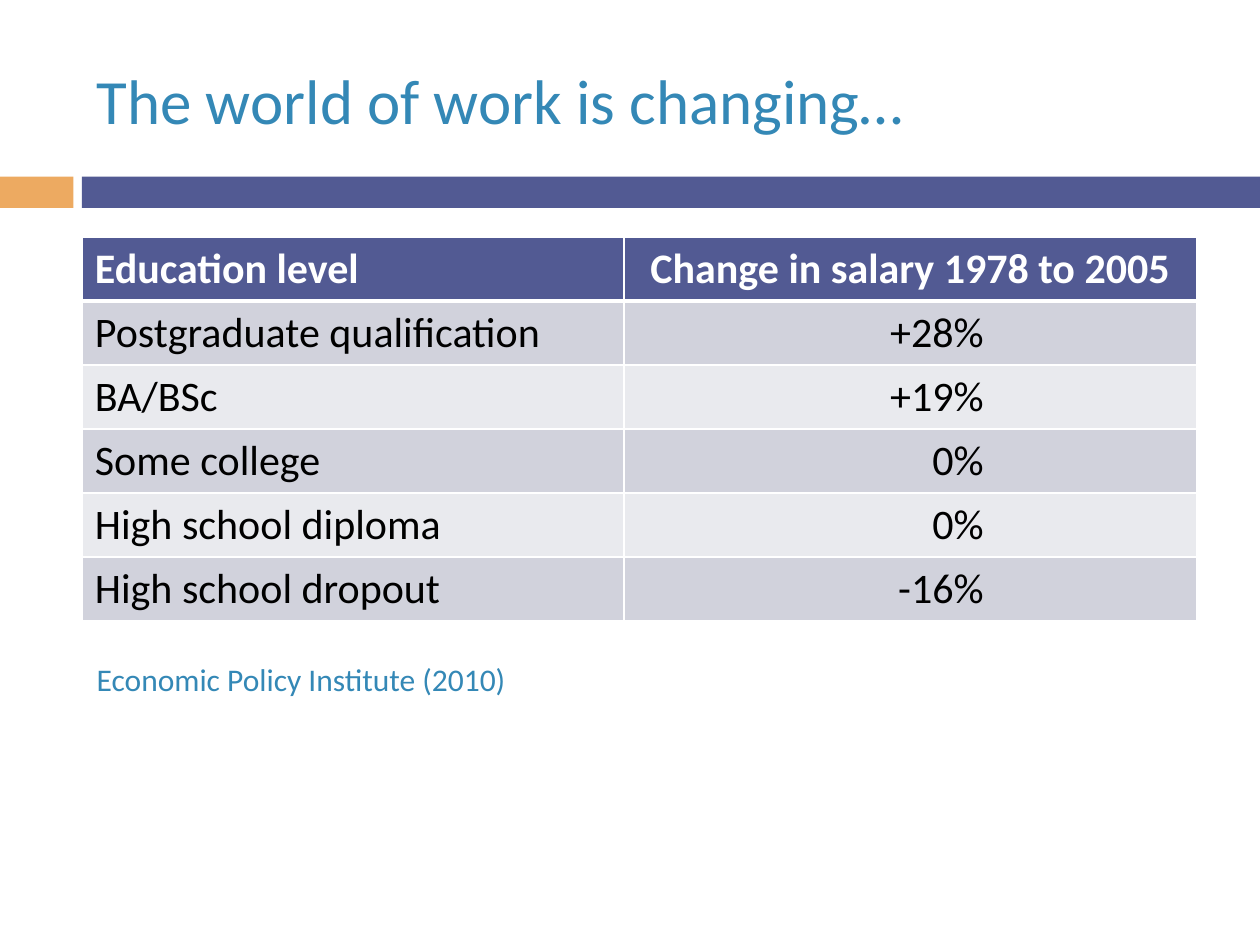
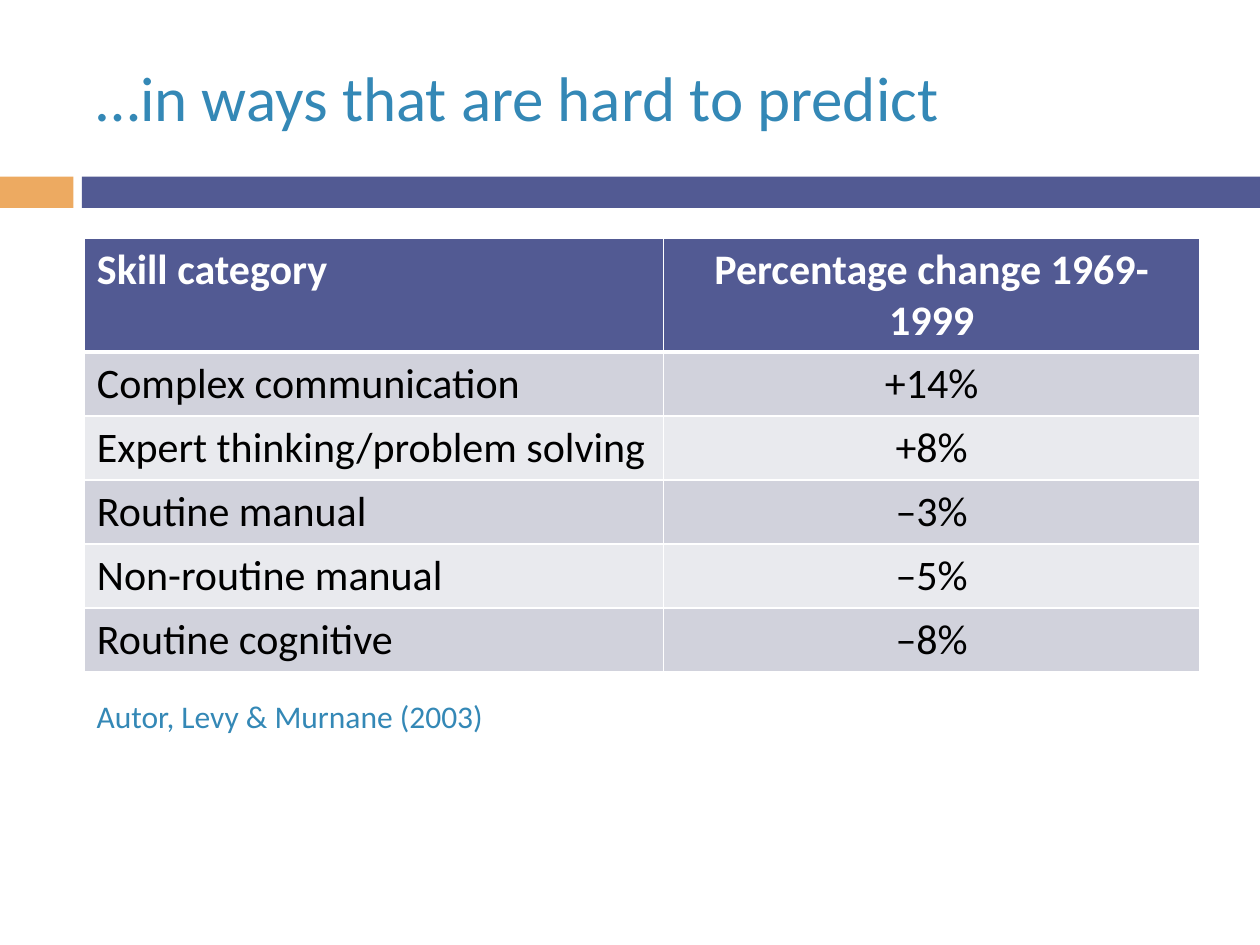
from lxml.etree import SubElement
from pptx import Presentation
from pptx.dml.color import RGBColor
from pptx.enum.shapes import MSO_SHAPE
from pptx.enum.text import MSO_ANCHOR, PP_ALIGN
from pptx.oxml.ns import qn
from pptx.util import Cm, Pt

SLIDES = [
    {
        "title": "The world of work is changing…",
        "title_top": 0.64,
        "rows": [
            ("Education level", "Change in salary 1978 to 2005"),
            ("Postgraduate qualification", "+28%"),
            ("BA/BSc", "+19%"),
            ("Some college", "0%"),
            ("High school diploma", "0%"),
            ("High school dropout", "-16%"),
        ],
        "table_at": (1.66, 4.78),
        "columns": (10.92, 11.54)[:1] + (11.54,),
        "header_height": 1.29,
        "value_align": PP_ALIGN.RIGHT,
        "value_inset": 4.29,
        "source": "Economic Policy Institute (2010)",
        "source_top": 13.18,
    },
    {
        "title": "…in ways that are hard to predict",
        "title_top": 0.58,
        "rows": [
            ("Skill category", "Percentage change 1969-1999"),
            ("Complex communication", "+14%"),
            ("Expert thinking/problem solving", "+8%"),
            ("Routine manual", "–3%"),
            ("Non-routine manual", "–5%"),
            ("Routine cognitive", "–8%"),
        ],
        "table_at": (1.7, 4.8),
        "columns": (11.68, 10.8),
        "header_height": 2.3,
        "value_align": PP_ALIGN.CENTER,
        "value_inset": 0.25,
        "source": "Autor, Levy & Murnane (2003)",
        "source_top": 13.92,
    },
]

FONT = "Calibri"
WHITE, BLACK = "FFFFFF", "000000"
BLUE, INDIGO, ORANGE = "3488B6", "525A93", "EDAA61"
STRIPES = ("E9EAEE", "D1D2DC")
BANDS = [(0, 1.48, ORANGE), (1.65, 23.75, INDIGO)]
BAND_TOP, BAND_HEIGHT = 3.56, 0.63
TEXT_LEFT, TEXT_WIDTH = 1.7, 22.66
ROW_HEIGHT = 1.29


def rgb(color):
    return RGBColor.from_string(color)


def write(tf, text, size=24, color=BLACK, bold=False, align=PP_ALIGN.LEFT):
    p = tf.paragraphs[0]
    p.alignment = align
    r = p.add_run()
    r.text = text
    r.font.name = FONT
    r.font.size = Pt(size)
    r.font.bold = bold
    r.font.color.rgb = rgb(color)


def add_text(s, text, top, height, anchor=MSO_ANCHOR.TOP, **style):
    sp = s.shapes.add_textbox(Cm(TEXT_LEFT), Cm(top), Cm(TEXT_WIDTH), Cm(height))
    tf = sp.text_frame
    tf.word_wrap = True
    tf.vertical_anchor = anchor
    write(tf, text, color=BLUE, **style)


def add_bands(s):
    for left, width, color in BANDS:
        sp = s.shapes.add_shape(MSO_SHAPE.RECTANGLE, Cm(left), Cm(BAND_TOP),
                                Cm(width), Cm(BAND_HEIGHT))
        sp.shadow.inherit = False
        sp.fill.solid()
        sp.fill.fore_color.rgb = rgb(color)
        sp.line.fill.background()


def add_borders(cell, top=1, bottom=1):
    tc_pr = cell._tc.get_or_add_tcPr()
    for side, width in (("L", 1), ("R", 1), ("T", top), ("B", bottom)):
        ln = SubElement(tc_pr, qn(f"a:ln{side}"), w=str(Pt(width)))
        fill = SubElement(ln, qn("a:solidFill"))
        SubElement(fill, qn("a:srgbClr"), val=WHITE)


def add_data_table(s, data):
    rows, columns = data["rows"], data["columns"]
    heights = [data["header_height"]] + [ROW_HEIGHT] * (len(rows) - 1)
    left, top = data["table_at"]
    table = s.shapes.add_table(len(rows), len(columns), Cm(left), Cm(top),
                               Cm(sum(columns)), Cm(sum(heights))).table
    for column, width in zip(table.columns, columns):
        column.width = Cm(width)
    for i, (row, height) in enumerate(zip(rows, heights)):
        table.rows[i].height = Cm(height)
        header = i == 0
        for j, text in enumerate(row):
            cell = table.cell(i, j)
            add_borders(cell, top=3 if i == 1 else 1, bottom=3 if header else 1)
            cell.fill.solid()
            cell.fill.fore_color.rgb = rgb(INDIGO if header else STRIPES[i % 2])
            align = PP_ALIGN.LEFT
            if j == 1:
                align = PP_ALIGN.CENTER if header else data["value_align"]
                if not header:
                    cell.margin_right = Cm(data["value_inset"])
            write(cell.text_frame, text, color=WHITE if header else BLACK,
                  bold=header, align=align)


def main():
    prs = Presentation()
    prs.slide_width, prs.slide_height = Cm(25.4), Cm(19.05)
    for data in SLIDES:
        s = prs.slides.add_slide(prs.slide_layouts[6])
        add_bands(s)
        add_text(s, data["title"], data["title_top"], 2.74,
                 anchor=MSO_ANCHOR.MIDDLE, size=36)
        add_data_table(s, data)
        add_text(s, data["source"], data["source_top"], 1.02, size=18)
    prs.save("out.pptx")


if __name__ == "__main__":
    main()
